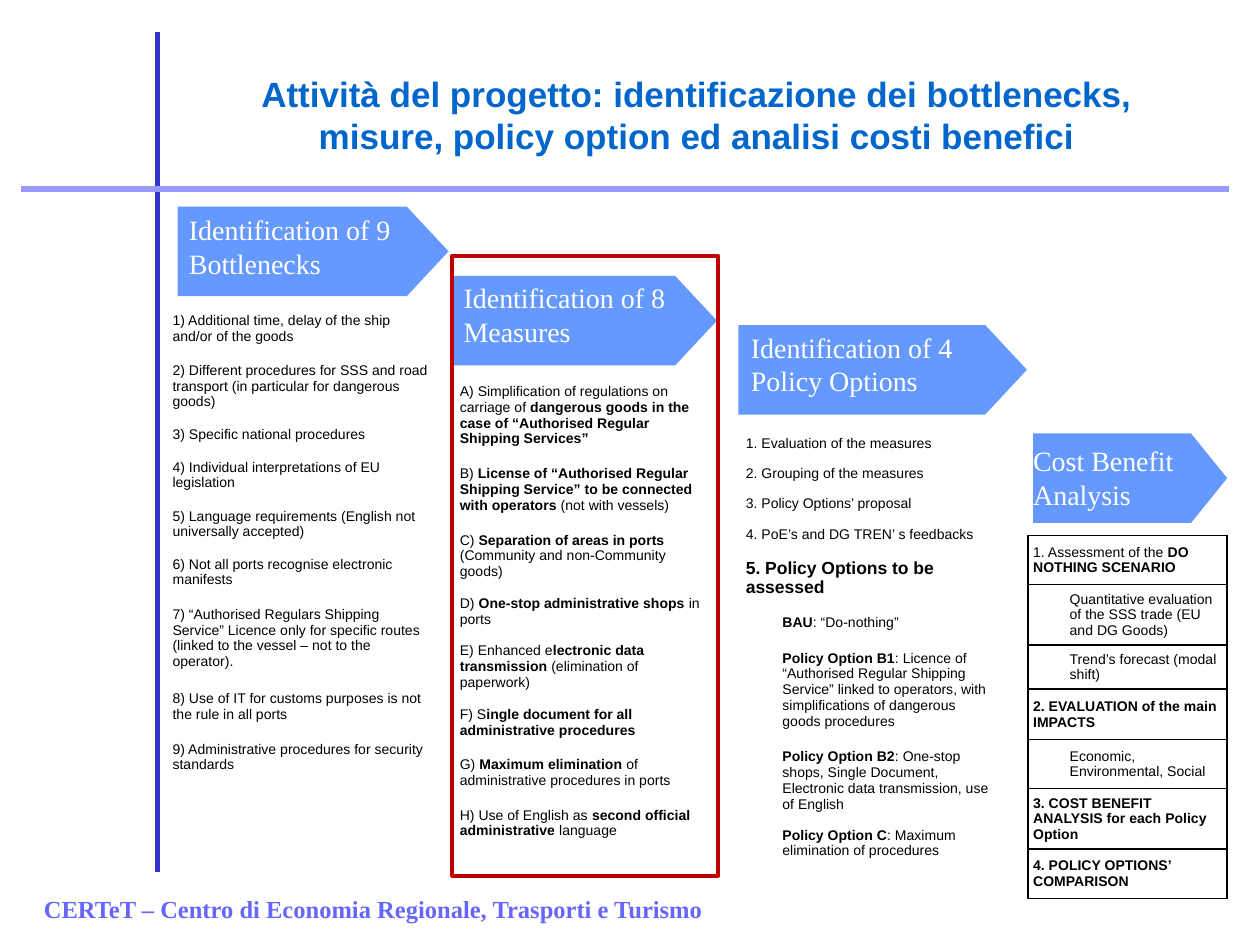
from pptx import Presentation, util as u
from pptx.dml.color import RGBColor
from pptx.enum import shapes, text
from pptx.oxml import parse_xml
from pptx.oxml.ns import nsdecls

BLACK, WHITE = RGBColor(0, 0, 0), RGBColor(255, 255, 255)
TITLE_BLUE, ARROW_BLUE = RGBColor(0x00, 0x66, 0xCC), RGBColor(0x66, 0x99, 0xFF)
AXIS_BLUE, RULE_BLUE = RGBColor(0x33, 0x33, 0xCC), RGBColor(0x99, 0x99, 0xFF)
FOOTER_BLUE, FRAME_RED = RGBColor(0x66, 0x66, 0xFF), RGBColor(0xC0, 0, 0)
SANS, SERIF = "Arial", "Times New Roman"
INDENT, PADDING = 0.29, 0.04

TITLE = ("Attività del progetto: identificazione dei bottlenecks, "
         "misure, policy option ed analisi costi benefici")
FOOTER = "CERTeT – Centro di Economia Regionale, Trasporti e Turismo"

# Arrow headings: text, arrow left, top, width, point ratio, text left, top, width
ARROW_HEIGHT = 0.71
HEADINGS = [
    ("Identification of 9 Bottlenecks", 1.41, 1.64, 2.15, 0.466, 1.5, 1.69, 2.06),
    ("Identification of 8 Measures", 3.59, 2.19, 2.1, 0.466, 3.68, 2.23, 2.01),
    ("Identification of 4 Policy Options", 5.86, 2.58, 2.29, 0.466, 5.96, 2.62, 2.19),
    ("Cost Benefit\nAnalysis", 8.2, 3.44, 1.54, 0.404, 8.2, 3.52, 1.43),
]

# Table rows: height, text (** marks bold, a leading > an indented entry), size if not 8
BOTTLENECKS = [
    (0.38, "1) Additional time, delay of the ship and/or of the goods"),
    (0.53, "2) Different procedures for SSS and road transport "
           "(in particular for dangerous goods)"),
    (0.24, "3) Specific national procedures"),
    (0.4, "4) Individual interpretations of EU legislation"),
    (0.38, "5) Language requirements (English not universally accepted)"),
    (0.38, "6) Not all ports recognise electronic manifests"),
    (0.67, "7) “Authorised Regulars Shipping Service” Licence only for specific "
           "routes (linked to the vessel – not to the operator)."),
    (0.42, "8) Use of IT for customs purposes is not the rule in all ports"),
    (0.38, "9) Administrative procedures for security standards"),
]
MEASURES = [
    (0.6, "A) Simplification of regulations on carriage of **dangerous goods in "
          "the case of “Authorised Regular Shipping Services”"),
    (0.57, "B) **License of “Authorised Regular Shipping Service” to be connected "
           "with operators **(not with vessels)"),
    (0.48, "C) **Separation of areas in ports **(Community and non-Community goods)"),
    (0.4, "D) **One-stop administrative shops** in ports"),
    (0.48, "E) Enhanced e**lectronic data transmission **(elimination of paperwork)"),
    (0.4, "F) S**ingle document for all administrative procedures"),
    (0.4, "G) **Maximum elimination** of administrative procedures in ports"),
    (0.4, "H) Use of English as **second official administrative **language"),
]
POLICY_OPTIONS = [
    (0.24, "1. Evaluation of the measures"),
    (0.24, "2. Grouping of the measures"),
    (0.24, "3. Policy Options’ proposal"),
    (0.24, "4. PoE’s and DG TREN’ s feedbacks"),
    (0.46, "**5. Policy Options to be assessed", 10),
    (0.24, ">**BAU**: “Do-nothing”"),
    (0.83, ">**Policy Option B1**: Licence of “Authorised Regular Shipping Service” "
           "linked to operators, with simplifications of dangerous goods procedures"),
    (0.59, ">**Policy Option B2**: One-stop shops, Single Document, "
           "Electronic data transmission, use of English"),
    (0.38, ">**Policy Option C**: Maximum elimination of procedures"),
]
COST_BENEFIT = [
    (0.39, "1. Assessment of the **DO NOTHING SCENARIO"),
    (0.48, ">Quantitative evaluation of the SSS trade (EU and DG Goods)"),
    (0.35, ">Trend’s forecast (modal shift)"),
    (0.4, "**2. EVALUATION of the main IMPACTS"),
    (0.39, ">Economic, Environmental, Social"),
    (0.48, "**3. COST BENEFIT ANALYSIS for each Policy Option"),
    (0.39, "**4. POLICY OPTIONS’ COMPARISON"),
]
# Tables: rows, left, top, width, bordered
TABLES = [
    (BOTTLENECKS, 1.33, 2.42, 2.11, False),
    (MEASURES, 3.61, 2.99, 2, False),
    (POLICY_OPTIONS, 5.88, 3.4, 2.04, False),
    (COST_BENEFIT, 8.16, 4.25, 1.58, True),
]


def inches(*lengths):
    return [u.Inches(length) for length in lengths]


def style(font, name, size, color, bold=False):
    font.name, font.size, font.bold = name, u.Pt(size), bold
    font.color.rgb = color


def set_margins(target, margin):
    target.margin_left = target.margin_right = u.Inches(margin)
    target.margin_top = target.margin_bottom = u.Inches(margin)


def add_rule(page, start, end, color):
    rule = page.shapes.add_connector(shapes.MSO_CONNECTOR.STRAIGHT, *inches(*start, *end))
    rule.line.color.rgb, rule.line.width = color, u.Pt(3)
    rule._element.spPr.append(parse_xml(f"<a:effectLst {nsdecls('a')}/>"))


def add_heading(parent, words, left, top, width, point, text_left, text_top, text_width):
    arrow = parent.add_shape(shapes.MSO_SHAPE.PENTAGON,
                             *inches(left, top, width, ARROW_HEIGHT))
    arrow.adjustments[0] = point
    arrow.shadow.inherit = False
    arrow.fill.solid()
    arrow.fill.fore_color.rgb = ARROW_BLUE
    arrow.line.fill.background()
    box = parent.add_textbox(*inches(text_left, text_top, text_width, 0.53))
    frame = box.text_frame
    frame.word_wrap = True
    set_margins(frame, 0)
    frame.text = words
    for para in frame.paragraphs:
        style(para.font, SERIF, 16, WHITE)


def add_borders(cell):
    properties = cell._tc.get_or_add_tcPr()
    for position, side in enumerate(("lnL", "lnR", "lnT", "lnB")):
        properties.insert(position, parse_xml(
            f'<a:{side} {nsdecls("a")} w="{u.Pt(1)}"><a:solidFill>'
            f'<a:srgbClr val="{BLACK}"/></a:solidFill></a:{side}>'))


def fill_cell(cell, words, size=8):
    cell.fill.background()
    cell.vertical_anchor = text.MSO_ANCHOR.MIDDLE
    set_margins(cell, PADDING)
    para = cell.text_frame.paragraphs[0]
    if words.startswith(">"):
        para._p.get_or_add_pPr().set("marL", str(u.Inches(INDENT)))
    for index, part in enumerate(words.removeprefix(">").split("**")):
        if part:
            span = para.add_run()
            span.text = part
            style(span.font, SANS, size, BLACK, bold=index % 2 == 1)


def add_list(page, rows, left, top, width, bordered):
    height = sum(row[0] for row in rows)
    table = page.shapes.add_table(len(rows), 1, *inches(left, top, width, height)).table
    table.first_row = table.horz_banding = False
    for index, (row_height, *content) in enumerate(rows):
        table.rows[index].height = u.Inches(row_height)
        cell = table.cell(index, 0)
        fill_cell(cell, *content)
        if bordered:
            add_borders(cell)


def main():
    deck = Presentation()
    deck.slide_width, deck.slide_height = inches(10, 7.5)
    page = deck.slides.add_slide(deck.slide_layouts[5])

    # Crossing rules
    add_rule(page, (1.25, 0.25), (1.25, 6.92), AXIS_BLUE)
    add_rule(page, (0.17, 1.5), (9.75, 1.5), RULE_BLUE)

    # Title
    title = page.shapes.title
    title.left, title.top, title.width, title.height = inches(1.56, 0.47, 7.94, 0.87)
    title.text_frame.text = TITLE
    title.text_frame.vertical_anchor = text.MSO_ANCHOR.MIDDLE
    para = title.text_frame.paragraphs[0]
    para.alignment = text.PP_ALIGN.CENTER
    style(para.runs[0].font, SANS, 20, TITLE_BLUE, bold=True)

    # Footer
    footer = page.shapes.add_textbox(*inches(0.25, 6.92, 8, 0.5)).text_frame
    footer.word_wrap = True
    footer.vertical_anchor = text.MSO_ANCHOR.BOTTOM
    footer.margin_bottom = u.Inches(0.09)
    footer.text = FOOTER
    style(footer.paragraphs[0].runs[0].font, SERIF, 14, FOOTER_BLUE, bold=True)

    # Four columns: arrow heading and list
    for heading in HEADINGS:
        add_heading(page.shapes, *heading)
    for table in TABLES:
        add_list(page, *table)

    # Frame around the measures
    frame = page.shapes.add_shape(shapes.MSO_SHAPE.RECTANGLE, *inches(3.59, 2.03, 2.11, 4.92))
    frame.shadow.inherit = False
    frame.fill.background()
    frame.line.color.rgb, frame.line.width = FRAME_RED, u.Pt(2.25)

    deck.save("out.pptx")


if __name__ == "__main__":
    main()
